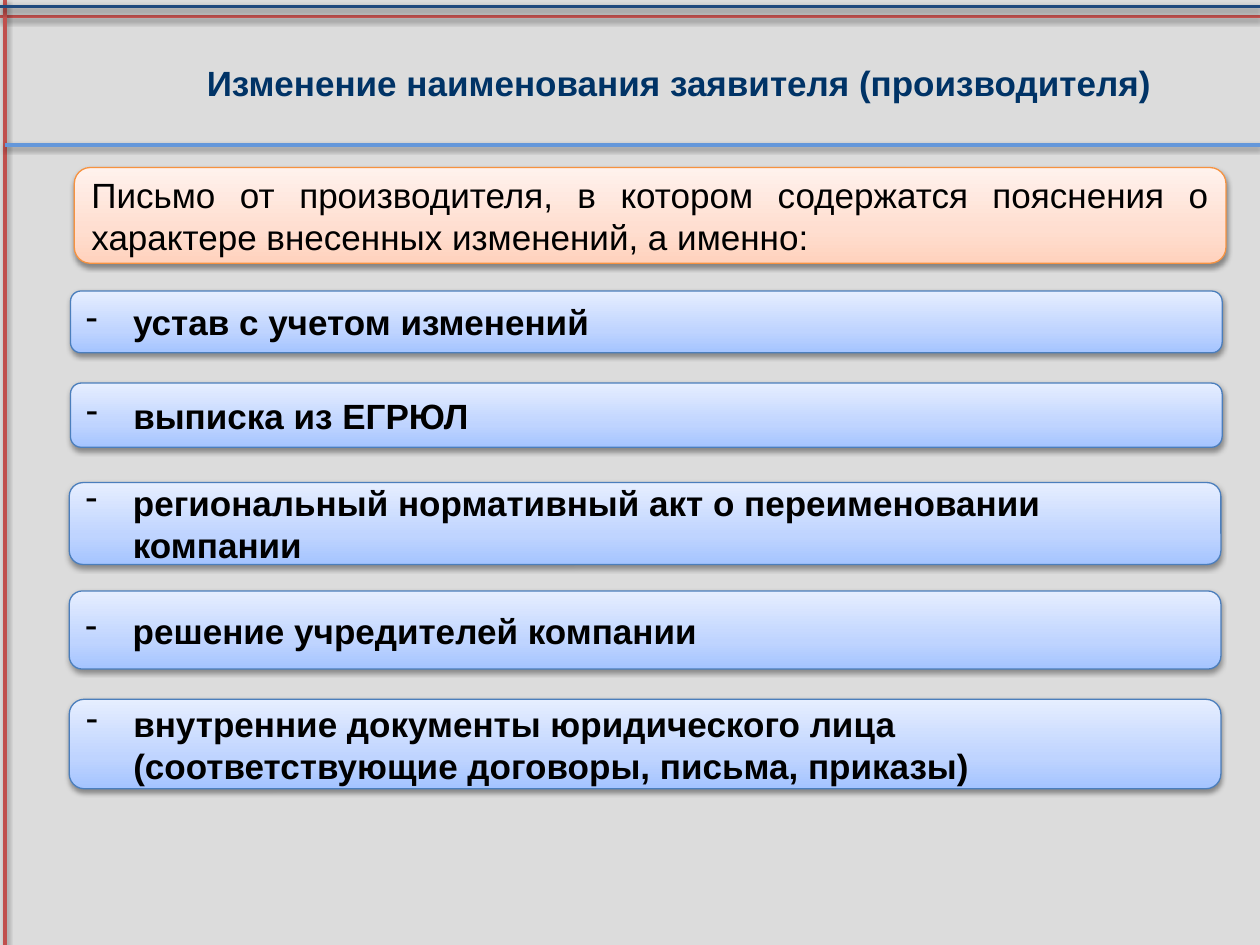
from copy import deepcopy
from dataclasses import dataclass

from pptx import Presentation
from pptx.dml.color import RGBColor
from pptx.enum.shapes import MSO_CONNECTOR, MSO_SHAPE
from pptx.enum.text import MSO_ANCHOR, PP_ALIGN
from pptx.oxml import parse_xml
from pptx.oxml.ns import nsdecls, qn
from pptx.util import Emu, Inches, Pt

COLUMNS, ROWS = 100, 75
SLIDE_WIDTH, SLIDE_HEIGHT = Inches(10), Inches(7.5)
CARD_COLUMNS = 91.4
HANGING_INDENT = Inches(0.375)

BACKGROUND = RGBColor(0xDC, 0xDC, 0xDC)
RED = RGBColor(0xC0, 0x50, 0x4D)
NAVY = RGBColor(0x1F, 0x49, 0x7D)
SKY = RGBColor(0x64, 0x97, 0xDA)
TITLE_BLUE = RGBColor(0x00, 0x33, 0x66)
BLACK = RGBColor(0x00, 0x00, 0x00)
ORANGE_EDGE = RGBColor(0xF6, 0x92, 0x40)
BLUE_EDGE = RGBColor(0x4B, 0x7E, 0xBC)
PEACH_SHADES = (RGBColor(0xFF, 0xD2, 0xBD), RGBColor(0xFF, 0xDE, 0xD0), RGBColor(0xFF, 0xF2, 0xED))
BLUE_SHADES = (RGBColor(0xA4, 0xC4, 0xFF), RGBColor(0xBF, 0xD4, 0xFF), RGBColor(0xE6, 0xEE, 0xFF))
SHADE_POSITIONS = (0, 0.35, 1)

BASE_FONT = {"name": "Arial", "size": Pt(20)}
TITLE_FONT = {**BASE_FONT, "bold": True}
INTRO_FONT = {**BASE_FONT, "bold": False}
ITEM_FONT = {**BASE_FONT, "bold": True}
FRAME_FORMAT = {"word_wrap": True, "vertical_anchor": MSO_ANCHOR.MIDDLE}


@dataclass(frozen=True)
class Rule:
    """A straight line between two grid points."""
    start: tuple[float, float]
    end: tuple[float, float]
    color: RGBColor


@dataclass(frozen=True)
class Card:
    """A rounded panel with its wording and place on the grid."""
    wording: str
    column: float
    row: float
    rows: float
    shades: tuple = BLUE_SHADES
    edge: RGBColor = BLUE_EDGE
    bulleted: bool = True


RULES = (
    Rule((100, 1.3), (0, 1.3), RED),
    Rule((0.4, 0), (0.4, 75), RED),
    Rule((0, 0.5), (100, 0.5), NAVY),
    Rule((0.4, 11.5), (100, 11.5), SKY),
)
CARDS = (
    Card("Письмо от производителя, в котором содержатся пояснения о характере внесенных изменений, а именно:",
         5.9, 13.3, 7.6, PEACH_SHADES, ORANGE_EDGE, False),
    Card("устав с учетом изменений", 5.6, 23.1, 4.9),
    Card("выписка из ЕГРЮЛ", 5.6, 30.4, 5.1),
    Card("региональный нормативный акт о переименовании компании", 5.5, 38.3, 6.5),
    Card("решение учредителей компании", 5.5, 46.9, 6.2),
    Card("внутренние документы юридического лица (соответствующие договоры, письма, приказы)",
         5.5, 55.5, 7.1),
)


def across(columns: float) -> Emu:
    """Return the width of a number of grid columns."""
    return Emu(round(SLIDE_WIDTH * columns / COLUMNS))


def down(rows: float) -> Emu:
    """Return the height of a number of grid rows."""
    return Emu(round(SLIDE_HEIGHT * rows / ROWS))


def apply_format(target, values: dict) -> None:
    """Set each attribute named in the format values."""
    for attribute, value in values.items():
        setattr(target, attribute, value)


def cast_shadow(element) -> None:
    """Give a shape or line a soft shadow falling downwards."""
    element.spPr.append(parse_xml(
        f'<a:effectLst {nsdecls("a")}>'
        f'<a:outerShdw blurRad="{Pt(3.1)}" dist="{Pt(1.6)}" dir="5400000" rotWithShape="0">'
        '<a:srgbClr val="000000"><a:alpha val="38000"/></a:srgbClr>'
        '</a:outerShdw></a:effectLst>'))


def write_text(frame, wording: str, font_format: dict, color: RGBColor, alignment: PP_ALIGN):
    """Write one formatted paragraph and return it."""
    apply_format(frame, FRAME_FORMAT)
    paragraph = frame.paragraphs[0]
    paragraph.alignment = alignment
    run = paragraph.add_run()
    run.text = wording
    apply_format(run.font, font_format)
    run.font.color.rgb = color
    return paragraph


def add_dash(paragraph) -> None:
    """Turn a paragraph into a hanging dash item."""
    properties = paragraph._p.get_or_add_pPr()
    properties.set("marL", str(HANGING_INDENT))
    properties.set("indent", str(-HANGING_INDENT))
    properties.append(parse_xml(f'<a:buFontTx {nsdecls("a")}/>'))
    properties.append(parse_xml(f'<a:buChar {nsdecls("a")} char="-"/>'))


def shade(panel, shades: tuple) -> None:
    """Fill a panel with a three-stop gradient rising from the bottom."""
    panel.fill.gradient()
    panel.fill.gradient_angle = 90
    stop_list = next(panel._element.spPr.iter(qn("a:gsLst")))
    stop_list.append(deepcopy(stop_list[-1]))
    for stop, color, position in zip(panel.fill.gradient_stops, shades, SHADE_POSITIONS):
        stop.color.rgb = color
        stop.position = position


def draw_rule(slide, rule: Rule) -> None:
    """Draw one decorative line."""
    (left, top), (right, bottom) = rule.start, rule.end
    line = slide.shapes.add_connector(
        MSO_CONNECTOR.STRAIGHT, across(left), down(top), across(right), down(bottom))
    line.line.color.rgb = rule.color
    line.line.width = Pt(2)
    cast_shadow(line._element)


def draw_title(slide, wording: str) -> None:
    """Write the slide heading."""
    heading = slide.shapes.add_textbox(across(7.8), down(1.4), across(92.2), down(10.3))
    write_text(heading.text_frame, wording, TITLE_FONT, TITLE_BLUE, PP_ALIGN.CENTER)


def draw_card(slide, card: Card) -> None:
    """Draw one panel with its wording."""
    panel = slide.shapes.add_shape(
        MSO_SHAPE.ROUNDED_RECTANGLE,
        across(card.column), down(card.row), across(CARD_COLUMNS), down(card.rows))
    shade(panel, card.shades)
    panel.line.color.rgb = card.edge
    panel.line.width = Pt(0.75)
    cast_shadow(panel._element)
    font_format = ITEM_FONT if card.bulleted else INTRO_FONT
    alignment = PP_ALIGN.LEFT if card.bulleted else PP_ALIGN.JUSTIFY
    paragraph = write_text(panel.text_frame, card.wording, font_format, BLACK, alignment)
    if card.bulleted:
        add_dash(paragraph)


def main() -> None:
    """Build and save the slide."""
    deck = Presentation()
    apply_format(deck, {"slide_width": SLIDE_WIDTH, "slide_height": SLIDE_HEIGHT})
    slide = deck.slides.add_slide(deck.slide_layouts[6])
    slide.background.fill.solid()
    slide.background.fill.fore_color.rgb = BACKGROUND
    for rule in RULES:
        draw_rule(slide, rule)
    draw_title(slide, "Изменение наименования заявителя (производителя)")
    for card in CARDS:
        draw_card(slide, card)
    deck.save("out.pptx")


if __name__ == "__main__":
    main()
